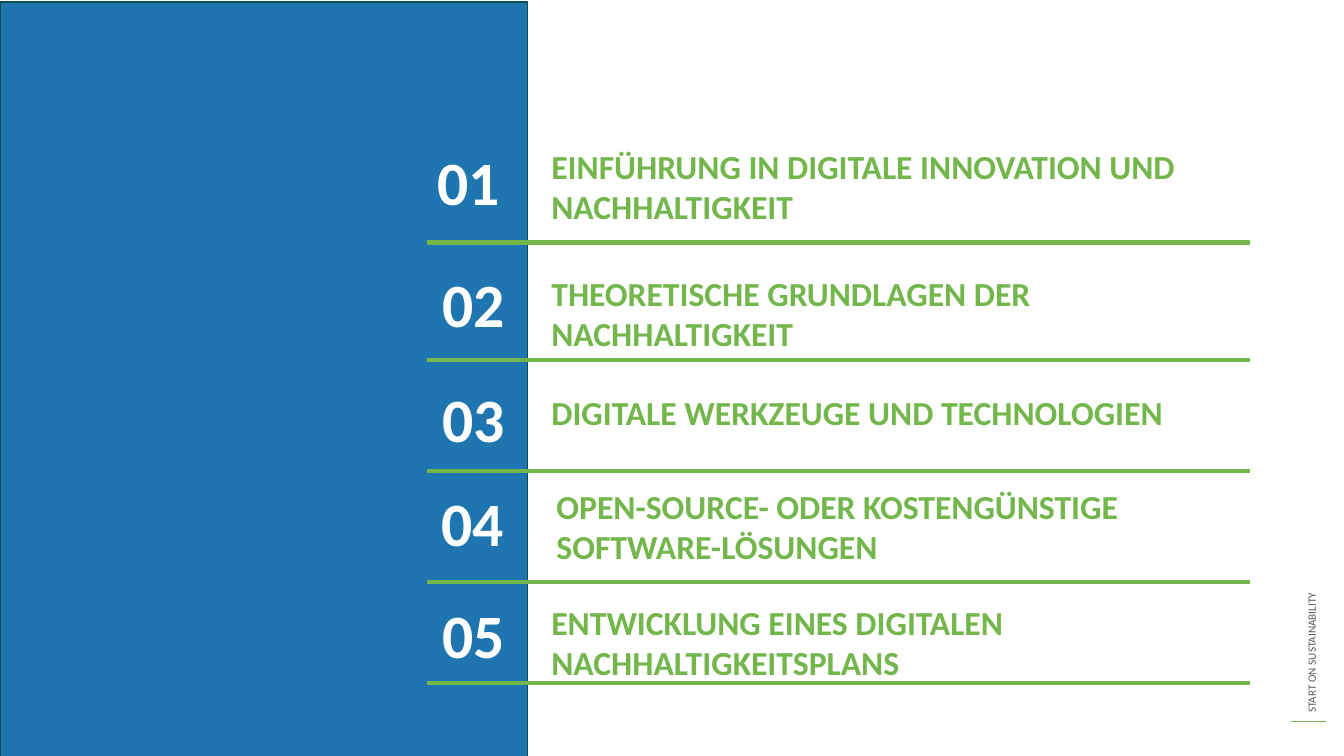
"""Build the agenda slide with five numbered chapters."""
from dataclasses import dataclass

from lxml import etree
from pptx import Presentation
from pptx.dml.color import RGBColor
from pptx.enum.shapes import MSO_CONNECTOR, MSO_SHAPE
from pptx.enum.text import MSO_ANCHOR, PP_ALIGN
from pptx.oxml.ns import qn
from pptx.util import Inches, Pt

RECTANGLE = MSO_SHAPE.RECTANGLE
STRAIGHT = MSO_CONNECTOR.STRAIGHT
TOP = MSO_ANCHOR.TOP
LEFT = PP_ALIGN.LEFT

# number, title, number left/top, title left/top, rule top
CHAPTERS = [
    ("01", "EINFÜHRUNG IN DIGITALE INNOVATION UND NACHHALTIGKEIT", (4.24, 1.16), (5.37, 1.4), 2.39),
    ("02", "THEORETISCHE GRUNDLAGEN DER NACHHALTIGKEIT", (4.29, 2.37), (5.37, 2.66), 3.56),
    ("03", "DIGITALE WERKZEUGE UND TECHNOLOGIEN", (4.29, 3.51), (5.37, 3.84), 4.66),
    ("04", "OPEN-SOURCE- ODER KOSTENGÜNSTIGE SOFTWARE-LÖSUNGEN", (4.28, 4.54), (5.42, 4.77), 5.76),
    ("05", "ENTWICKLUNG EINES DIGITALEN NACHHALTIGKEITSPLANS", (4.29, 5.65), (5.37, 5.92), 6.76),
]
SIDE_LABEL = "START ON SUSTAINABILITY"
NUMBER_SIZE = (1.35, 1.05)
TITLE_SIZE = (7.18, 0.37)
RULE_LEFT, RULE_SIZE = 4.24, (8.15, 0.03)


@dataclass(frozen=True)
class Theme:
    font: str = "Calibri"
    blue: str = "1E75B0"
    outline: str = "054F50"
    green: str = "73B64B"
    white: str = "FFFFFF"
    grey: str = "595959"
    number: int = 44
    title: int = 24
    label: int = 8
    line: int = 1


THEME = Theme()


def add_text(slide, text, position, size, points, color, bold=True, spacing=1.0):
    box = slide.shapes.add_textbox(*map(Inches, position + size))
    frame = box.text_frame
    frame.word_wrap = True
    frame.vertical_anchor = TOP
    para = frame.paragraphs[0]
    para.text = text
    para.alignment = LEFT
    para.line_spacing = spacing
    para.font.name = THEME.font
    para.font.size = Pt(points)
    para.font.bold = bold
    para.font.color.rgb = RGBColor.from_string(color)
    return box


def set_line(line, color):
    line.color.rgb = RGBColor.from_string(color)
    line.width = Pt(THEME.line)


def add_bar(slide, position, size, fill, outline):
    bar = slide.shapes.add_shape(RECTANGLE, *map(Inches, position + size))
    bar.shadow.inherit = False
    bar.fill.solid()
    bar.fill.fore_color.rgb = RGBColor.from_string(fill)
    set_line(bar.line, outline)


def add_side_label(slide):
    label = add_text(slide, SIDE_LABEL, (10.78, 4.82), (4.46, 0.24),
                     THEME.label, THEME.grey, bold=False)
    label.rotation = 270
    ends = map(Inches, (12.8, 7.16, 13.15, 7.16))
    underline = slide.shapes.add_connector(STRAIGHT, *ends)
    set_line(underline.line, THEME.green)
    etree.SubElement(underline._element.spPr, qn("a:effectLst"))


def main():
    deck = Presentation()
    deck.slide_width, deck.slide_height = Inches(13.33), Inches(7.5)
    slide = deck.slides.add_slide(deck.slide_layouts[6])
    add_side_label(slide)
    add_bar(slide, (0, 0.02), (5.23, 7.5), THEME.blue, THEME.outline)
    for number, title, number_at, title_at, rule_top in CHAPTERS:
        add_text(slide, title, title_at, TITLE_SIZE, THEME.title, THEME.green)
        add_text(slide, number, number_at, NUMBER_SIZE, THEME.number, THEME.white, spacing=1.3)
        add_bar(slide, (RULE_LEFT, rule_top), RULE_SIZE, THEME.green, THEME.green)
    deck.save("out.pptx")


if __name__ == "__main__":
    main()
